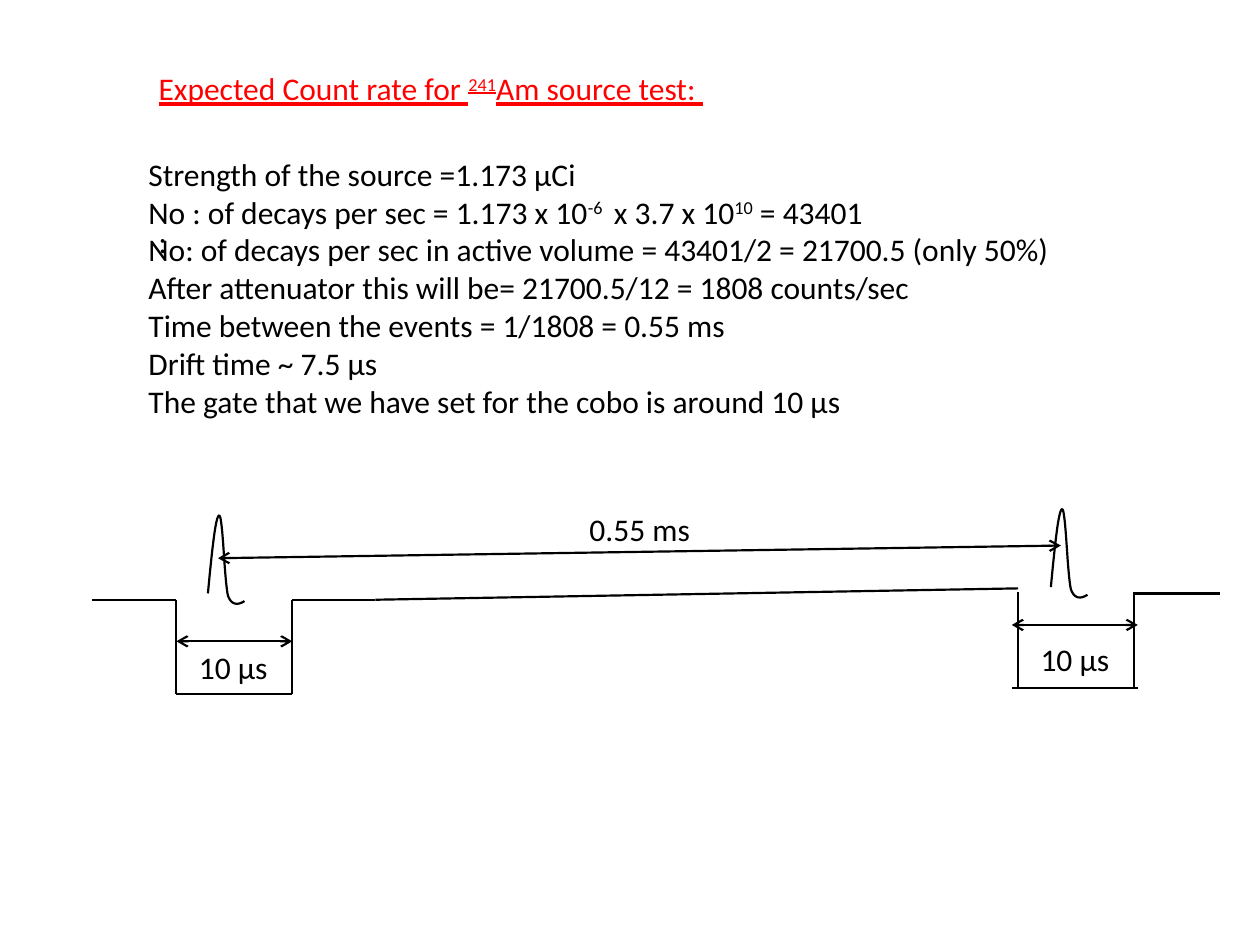
"""Build the slide on the expected count rate of the americium source test."""
from dataclasses import dataclass

import lxml.etree
import pptx
import pptx.dml.color
import pptx.enum.shapes
import pptx.enum.text
import pptx.oxml.ns
import pptx.util

Inches = pptx.util.Inches
Point = tuple[float, float]
BLACK = pptx.dml.color.RGBColor(0, 0, 0)
RED = pptx.dml.color.RGBColor(255, 0, 0)
LINE_WIDTH = pptx.util.Pt(1.25)
CURVE_STEPS = 16


@dataclass
class Span:
    text: str
    raised: bool = False
    color: pptx.dml.color.RGBColor = BLACK
    underline: bool = False


@dataclass
class TextBlock:
    left: float
    top: float
    width: float
    height: float
    paragraphs: list[list[Span]]
    wrap: bool = False
    gap_before_last: float = 0


@dataclass
class Segment:
    start: Point
    end: Point
    arrows: bool = False


CALCULATION = [
    [Span("Strength of the source =1.173 μCi")],
    [
        Span("No : of decays per sec = 1.173 x 10"),
        Span("-6 ", raised=True),
        Span(" x 3.7 x 10"),
        Span("10", raised=True),
        Span(" = 43401"),
    ],
    [Span("No: of decays per sec in active volume = 43401/2 = 21700.5 (only 50%)")],
    [Span("After attenuator this will be= 21700.5/12 = 1808 counts/sec")],
    [Span("Time between the events = 1/1808 = 0.55 ms")],
    [Span("Drift time ~ 7.5 μs")],
    [Span("The gate that we have set for the cobo is around 10 μs")],
]
HEADING = [
    [
        Span("Expected Count rate for ", color=RED, underline=True),
        Span("241", raised=True, color=RED, underline=True),
        Span("Am source test: ", color=RED, underline=True),
    ],
    [Span(":")],
]
TEXT_BLOCKS = [
    TextBlock(1.08, 1.18, 7.44, 3.74, CALCULATION),
    TextBlock(1.48, 5.09, 0.75, 0.4, [[Span("10 μs")]]),
    TextBlock(8.16, 5.03, 0.75, 0.4, [[Span("10 μs")]]),
    TextBlock(4.58, 4, 1.01, 0.4, [[Span("0.55 ms")]]),
    TextBlock(1.16, 0.5, 7.59, 1.62, HEADING, wrap=True, gap_before_last=66),
]
SEGMENTS = [
    Segment((0.73, 4.76), (1.4, 4.76)),
    Segment((1.4, 4.76), (1.4, 5.51)),
    Segment((1.4, 5.51), (2.32, 5.51)),
    Segment((2.32, 4.76), (2.32, 5.51)),
    Segment((2.32, 4.76), (2.98, 4.76)),
    Segment((1.4, 5.09), (2.32, 5.09), arrows=True),
    Segment((8.08, 4.7), (8.08, 5.45)),
    Segment((9, 4.7), (9, 5.45)),
    Segment((9.01, 4.71), (9.68, 4.71)),
    Segment((8.03, 5.46), (9.03, 5.46)),
    Segment((8.03, 4.96), (9.03, 4.96), arrows=True),
    Segment((2.98, 4.76), (8.08, 4.67)),
    Segment((1.73, 4.43), (8.42, 4.33), arrows=True),
]
PULSE_STARTS = [(1.65, 4.71), (8.34, 4.66)]
PULSE_CURVES = [
    ((0, 0), (0.03, -0.31), (0.06, -0.62), (0.09, -0.62)),
    ((0.09, -0.62), (0.12, -0.61), (0.13, -0.1), (0.16, 0.02)),
    ((0.16, 0.02), (0.2, 0.13), (0.29, 0.06), (0.29, 0.06)),
]


def add_text(page, block: TextBlock) -> None:
    box = page.shapes.add_textbox(
        *map(Inches, (block.left, block.top, block.width, block.height))
    )
    frame = box.text_frame
    frame.word_wrap = block.wrap
    frame.auto_size = pptx.enum.text.MSO_AUTO_SIZE.NONE
    for index, spans in enumerate(block.paragraphs):
        para = frame.add_paragraph() if index else frame.paragraphs[0]
        for item in spans:
            span = para.add_run()
            span.text = item.text
            span.font.color.rgb = item.color
            formats = {
                "name": "Calibri",
                "size": pptx.util.Pt(18),
                "underline": item.underline,
            }
            for name, value in formats.items():
                setattr(span.font, name, value)
            if item.raised:
                span._r.get_or_add_rPr().set("baseline", "30000")
    if block.gap_before_last:
        para.space_before = pptx.util.Pt(block.gap_before_last)


def style_line(shape) -> None:
    shape.line.color.rgb = BLACK
    shape.line.width = LINE_WIDTH


def add_segment(page, segment: Segment) -> None:
    connector = page.shapes.add_connector(
        pptx.enum.shapes.MSO_CONNECTOR.STRAIGHT,
        *map(Inches, segment.start + segment.end),
    )
    style_line(connector)
    qn = pptx.oxml.ns.qn
    properties = connector.element.spPr
    if segment.arrows:
        for tag in ("a:headEnd", "a:tailEnd"):
            lxml.etree.SubElement(properties.find(qn("a:ln")), qn(tag), type="arrow")
    lxml.etree.SubElement(properties, qn("a:effectLst"))


def curve_point(curve: tuple[Point, ...], t: float) -> Point:
    weights = ((1 - t) ** 3, 3 * t * (1 - t) ** 2, 3 * t**2 * (1 - t), t**3)
    x, y = (sum(w * p[axis] for w, p in zip(weights, curve)) for axis in (0, 1))
    return x, y


def add_pulse(page, start: Point) -> None:
    left, top = start
    offsets = [
        curve_point(curve, step / CURVE_STEPS)
        for curve in PULSE_CURVES
        for step in range(1, CURVE_STEPS + 1)
    ]
    builder = page.shapes.build_freeform(Inches(left), Inches(top))
    builder.add_line_segments(
        [(Inches(left + x), Inches(top + y)) for x, y in offsets], close=False
    )
    pulse = builder.convert_to_shape()
    pulse.shadow.inherit = False
    pulse.fill.background()
    style_line(pulse)


def main() -> None:
    deck = pptx.Presentation()
    deck.slide_width, deck.slide_height = Inches(10), Inches(7.5)
    page = deck.slides.add_slide(deck.slide_layouts[6])
    for segment in SEGMENTS:
        add_segment(page, segment)
    for start in PULSE_STARTS:
        add_pulse(page, start)
    for block in TEXT_BLOCKS:
        add_text(page, block)
    deck.save("out.pptx")


if __name__ == "__main__":
    main()
